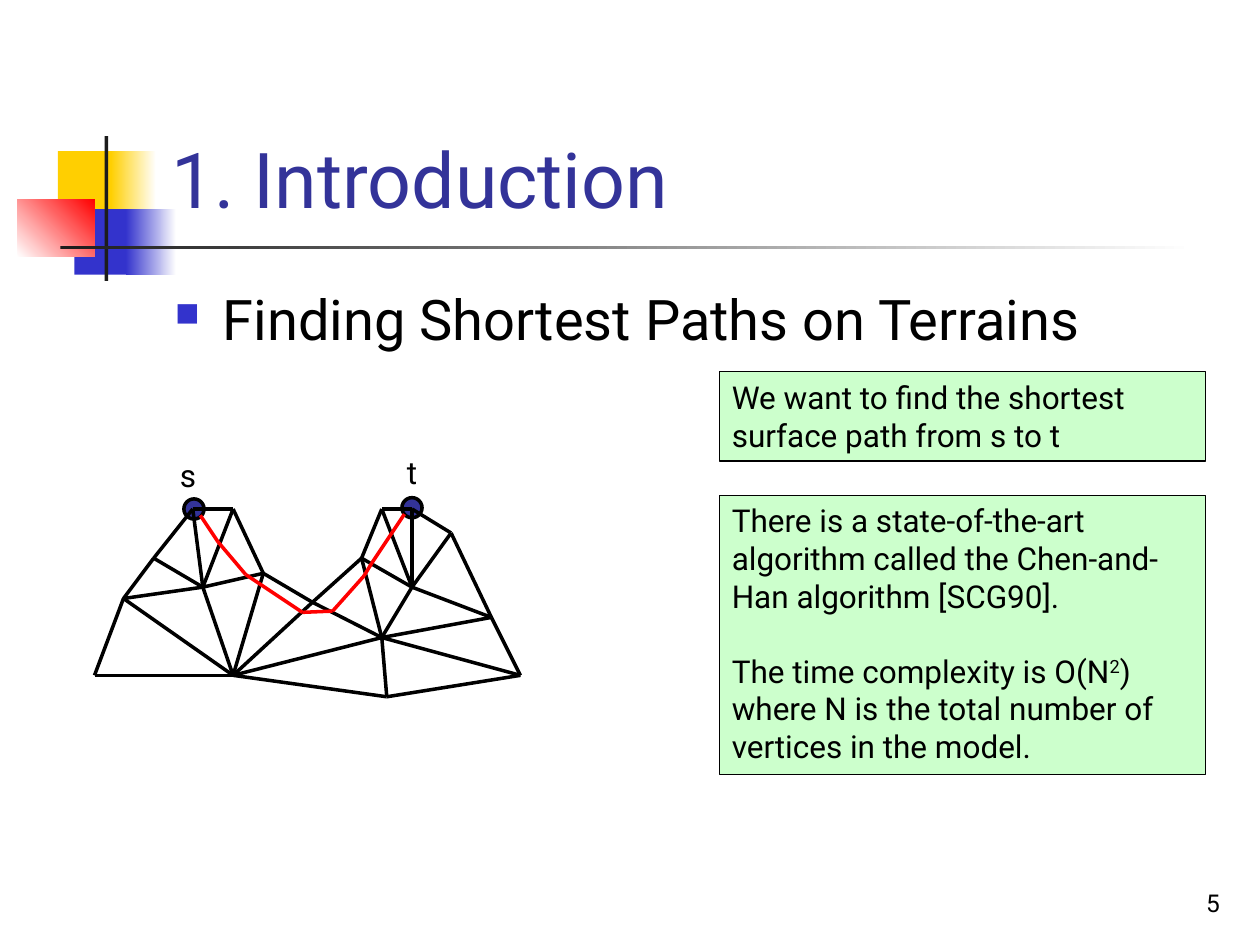
"""Build a slide on shortest paths over a terrain mesh."""
from dataclasses import dataclass
from itertools import pairwise
from typing import Any, NamedTuple, Optional

from lxml import etree
from pptx import Presentation
from pptx.dml.color import RGBColor
from pptx.enum.shapes import MSO_CONNECTOR, MSO_SHAPE
from pptx.enum.text import MSO_ANCHOR, MSO_AUTO_SIZE, PP_ALIGN
from pptx.oxml.ns import qn
from pptx.util import Inches, Pt

RECT, OVAL = MSO_SHAPE.RECTANGLE, MSO_SHAPE.OVAL
STRAIGHT = MSO_CONNECTOR.STRAIGHT
TOP, BOTTOM = MSO_ANCHOR.TOP, MSO_ANCHOR.BOTTOM
LEFT, RIGHT = PP_ALIGN.LEFT, PP_ALIGN.RIGHT
NO_FIT = MSO_AUTO_SIZE.NONE


@dataclass(frozen=True)
class Theme:
    font: str = "Roboto"
    head: int = 44
    lead: int = 32
    text: int = 18
    small: int = 14
    thick: float = 2
    thin: float = 0.75
    black: str = "000000"
    white: str = "FFFFFF"
    dark: str = "1C1C1C"
    gold: str = "FFCF01"
    blue: str = "3333CC"
    navy: str = "333399"
    red: str = "FF0000"
    green: str = "CCFFCC"


THEME = Theme()


class Box(NamedTuple):
    left: float
    top: float
    width: float
    height: float


class Panel(NamedTuple):
    box: Box
    fill: str
    fade: Optional[str] = None
    angle: float = 0


class Point(NamedTuple):
    x: float
    y: float


class Part(NamedTuple):
    text: str
    raised: bool = False


class Mark(NamedTuple):
    name: str
    dot: Box
    label: Box


class Note(NamedTuple):
    box: Box
    paras: list[list[Part]]


PANELS = [
    Panel(Box(0.46, 1.2, 0.48, 0.52), THEME.gold),
    Panel(Box(0.88, 1.2, 0.36, 0.52), THEME.gold, THEME.white),
    Panel(Box(0.59, 1.66, 0.46, 0.52), THEME.blue),
    Panel(Box(1, 1.66, 0.4, 0.52), THEME.blue, THEME.white),
    Panel(Box(0.14, 1.58, 0.61, 0.46), THEME.white, THEME.red, 45),
    Panel(Box(0.83, 1.08, 0.03, 1.15), THEME.dark),
    Panel(Box(0.48, 1.95, 9, 0.03), THEME.dark, THEME.white),
]
MARKS = [
    Mark("s", Box(1.46, 3.96, 0.16, 0.16), Box(1.33, 3.57, 0.31, 0.4)),
    Mark("t", Box(3.19, 3.95, 0.16, 0.16), Box(3.13, 3.55, 0.29, 0.4)),
]
NOTES = [
    Note(Box(5.71, 2.95, 3.86, 0.71),
         [[Part("We want to find the shortest surface path from s to t")]]),
    Note(Box(5.71, 3.93, 3.86, 2.22),
         [[Part("There is a state-of-the-art algorithm called the "
                "Chen-and-Han algorithm [SCG90].")],
          [Part("The time complexity is O(N"), Part("2", True),
           Part(") where N is the total number of vertices in the model.")]]),
]
NODES = {
    "s": Point(1.53, 4.04), "a": Point(1.22, 4.43), "b": Point(1.61, 4.66),
    "c": Point(1.85, 4.04), "d": Point(2.09, 4.55), "e": Point(2.48, 4.78),
    "f": Point(2.87, 4.43), "g": Point(3.03, 5.06), "h": Point(3.03, 4.04),
    "i": Point(3.27, 4.66), "t": Point(3.27, 4.04), "j": Point(3.58, 4.23),
    "k": Point(3.9, 4.9), "m": Point(4.13, 5.36), "n": Point(0.98, 4.75),
    "o": Point(0.75, 5.36), "p": Point(1.85, 5.36), "q": Point(3.07, 5.53),
}
EDGES = ("sa sb ab sc bc cd bd de ef fg fh hi ht ti tj ij jk ik fi ig gk km "
         "gm eg an nb no np op bp pe pg pq qm gq pd").split()
ROUTE = [Point(1.59, 4.09), Point(1.73, 4.3), Point(1.95, 4.56),
         Point(2.4, 4.86), Point(2.64, 4.85), Point(2.89, 4.57),
         Point(2.95, 4.47), Point(3.11, 4.23), Point(3.21, 4.08)]


def tint(code: str) -> RGBColor:
    return RGBColor.from_string(code)


def spots(box: Box) -> list[int]:
    return [Inches(side) for side in box]


def write(para: Any, parts: list[Part], size: float,
          ink: str = THEME.black, align: Any = LEFT) -> None:
    para.alignment = align
    for part in parts:
        run = para.add_run()
        run.text = part.text
        run.font.name, run.font.size = THEME.font, Pt(size)
        run.font.color.rgb = tint(ink)
        if part.raised:
            run.font._element.set("baseline", "30000")


def frame(shape: Any, anchor: Any = TOP, wrap: bool = True) -> Any:
    text = shape.text_frame
    text.auto_size, text.word_wrap = NO_FIT, wrap
    text.vertical_anchor = anchor
    return text


def label(shapes: Any, box: Box, words: str, size: float, anchor: Any = TOP,
          align: Any = LEFT, wrap: bool = True) -> Any:
    text = frame(shapes.add_textbox(*spots(box)), anchor, wrap)
    write(text.paragraphs[0], [Part(words)], size, align=align)
    return text.paragraphs[0]


def block(shapes: Any, kind: Any, box: Box, fill: str,
          line: Optional[float] = None) -> Any:
    shape = shapes.add_shape(kind, *spots(box))
    shape.shadow.inherit = False
    shape.fill.solid()
    shape.fill.fore_color.rgb = tint(fill)
    if line is None:
        shape.line.fill.background()
    else:
        shape.line.color.rgb, shape.line.width = tint(THEME.black), Pt(line)
    return shape


def panel(shapes: Any, item: Panel) -> None:
    fill = block(shapes, RECT, item.box, item.fill).fill
    if item.fade:
        fill.gradient()
        fill.gradient_angle = item.angle
        for stop, code in zip(fill.gradient_stops, (item.fill, item.fade)):
            stop.color.rgb = tint(code)


def bullet(para: Any) -> None:
    para.space_before = Pt(6)
    props = para._p.get_or_add_pPr()
    props.set("marL", str(Inches(0.38)))
    props.set("indent", str(-Inches(0.38)))
    hue = etree.SubElement(props, qn("a:buClr"))
    etree.SubElement(hue, qn("a:srgbClr"), val=THEME.blue)
    etree.SubElement(props, qn("a:buSzPct"), val="60000")
    etree.SubElement(props, qn("a:buChar"), char="■")


def note(shapes: Any, item: Note) -> None:
    text = frame(block(shapes, RECT, item.box, THEME.green, THEME.thin))
    for spot, parts in enumerate(item.paras):
        para = text.add_paragraph() if spot else text.paragraphs[0]
        para.space_before = Pt(21 if spot else 0)
        write(para, parts, THEME.text)


def mesh(shapes: Any, pairs: Any, ink: str) -> None:
    group = shapes.add_group_shape().shapes
    for start, end in pairs:
        line = group.add_connector(STRAIGHT, *map(Inches, (*start, *end)))
        line.line.color.rgb, line.line.width = tint(ink), Pt(THEME.thick)
        etree.SubElement(line._element.spPr, qn("a:effectLst"))


def main() -> None:
    deck = Presentation()
    deck.slide_width, deck.slide_height = Inches(10), Inches(7.5)
    shapes = deck.slides.add_slide(deck.slide_layouts[5]).shapes
    for item in PANELS:
        panel(shapes, item)
    title = shapes.title
    title.left, title.top, title.width, title.height = spots(
        Box(1.26, 0.23, 8.52, 1.6))
    write(frame(title, BOTTOM).paragraphs[0], [Part("1. Introduction")],
          THEME.head, THEME.navy)
    bullet(label(shapes, Box(1.29, 2.21, 8.5, 1.07),
                 "Finding Shortest Paths on Terrains", THEME.lead))
    label(shapes, Box(7.7, 6.83, 2.08, 0.5), "5", THEME.small, BOTTOM, RIGHT)
    for mark in MARKS:
        block(shapes, OVAL, mark.dot, THEME.navy, THEME.thick)
        label(shapes, mark.label, mark.name, THEME.text, wrap=False)
    for item in NOTES:
        note(shapes, item)
    mesh(shapes, [(NODES[start], NODES[end]) for start, end in EDGES],
         THEME.black)
    mesh(shapes, pairwise(ROUTE), THEME.red)
    deck.save("out.pptx")


if __name__ == "__main__":
    main()
